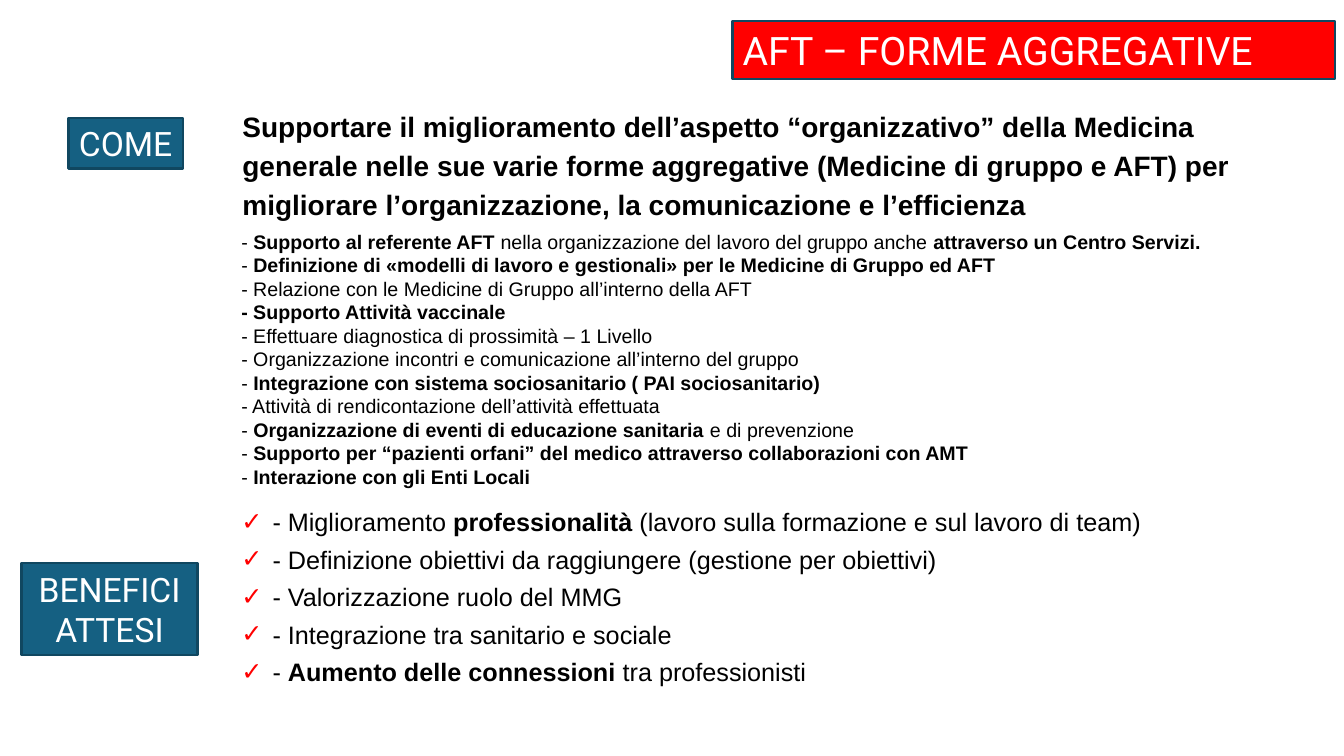
from lxml.etree import SubElement as Sub
from pptx import Presentation
from pptx.dml.color import RGBColor as Rgb
from pptx.enum.shapes import MSO_SHAPE as Kind
from pptx.enum.text import MSO_ANCHOR as Anchor, MSO_AUTO_SIZE as Fit, PP_ALIGN as Align
from pptx.oxml.ns import qn
from pptx.util import Inches, Pt

WHITE = Rgb(255, 255, 255)
BLACK = Rgb(0, 0, 0)
RED = Rgb(255, 0, 0)
TEAL = Rgb(0x15, 0x60, 0x82)
EDGE = Rgb(0x10, 0x47, 0x60)

GOAL = (
    "**Supportare il miglioramento dell’aspetto “organizzativo” della Medicina "
    "generale nelle sue varie forme aggregative (Medicine di gruppo e AFT) per "
    "migliorare l’organizzazione, la comunicazione e l’efficienza**"
)
MEANS = [
    "- **Supporto al referente AFT **nella organizzazione del lavoro del gruppo anche "
    "**attraverso un Centro Servizi.**",
    "- **Definizione di «modelli di lavoro e gestionali» per le Medicine di Gruppo ed AFT**",
    "- Relazione con le Medicine di Gruppo all’interno della AFT",
    "**- Supporto Attività vaccinale**",
    "- Effettuare diagnostica di prossimità – 1 Livello",
    "- Organizzazione incontri e comunicazione all’interno del gruppo",
    "- **Integrazione con sistema sociosanitario ( PAI sociosanitario)**",
    "- Attività di rendicontazione dell’attività effettuata",
    "- **Organizzazione di eventi di educazione sanitaria **e di prevenzione",
    "- **Supporto per “pazienti orfani” del medico attraverso collaborazioni con AMT**",
    "- **Interazione con gli Enti Locali**",
]
GAINS = [
    "- Miglioramento **professionalità **(lavoro sulla formazione e sul lavoro di team)",
    "- Definizione obiettivi da raggiungere (gestione per obiettivi)",
    "- Valorizzazione ruolo del MMG",
    "- Integrazione tra sanitario e sociale",
    "- **Aumento delle connessioni **tra professionisti",
]


def apply(item, style):
    for key, value in style.items():
        setattr(item, key, value)


class Board:
    plain = {"name": "Arial", "color": BLACK}
    badge = {"name": "Roboto", "color": WHITE}

    def __init__(self, deck):
        self.wide, self.high = deck.slide_width, deck.slide_height
        self.slide = deck.slides.add_slide(deck.slide_layouts[3])

    def area(self, left, top, width, height):
        return [
            round(share * size / 100)
            for share, size in zip((left, top, width, height), (self.wide, self.high) * 2)
        ]

    def place(self, shape, area):
        apply(shape, dict(zip(("left", "top", "width", "height"), self.area(*area))))

    def fill_text(self, shape, lines, font, size, para, anchor=Anchor.TOP, wrap=True, tick=False):
        frame = shape.text_frame
        apply(frame, {"word_wrap": wrap, "auto_size": Fit.NONE, "vertical_anchor": anchor})
        for row, line in enumerate(lines):
            par = frame.add_paragraph() if row else frame.paragraphs[0]
            self.bullet(par, tick)
            apply(par, {"space_before": Pt(0), **para})
            for turn, part in enumerate(line.split("**")):
                for step, text in enumerate(part.split("\v")):
                    if step:
                        par.add_line_break()
                    if text:
                        run = par.add_run()
                        run.text = text
                        apply(run.font, {"name": font["name"], "size": Pt(size), "bold": turn % 2 == 1})
                        run.font.color.rgb = font["color"]

    def bullet(self, par, tick):
        prop = par._p.get_or_add_pPr()
        dent = Inches(0.31) if tick else 0
        prop.set("marL", str(dent))
        prop.set("indent", str(-dent))
        if tick:
            Sub(Sub(prop, qn("a:buClr")), qn("a:srgbClr"), val=str(RED))
            Sub(prop, qn("a:buChar"), char="✓")
        else:
            Sub(prop, qn("a:buNone"))

    def paint(self, shape, fill):
        shape.fill.solid()
        shape.fill.fore_color.rgb = fill
        shape.line.color.rgb = EDGE
        shape.line.width = Pt(1.5)

    def title(self, text, area):
        shape = self.slide.shapes.title
        self.place(shape, area)
        self.paint(shape, RED)
        self.fill_text(shape, [text], self.badge, 28, {"alignment": Align.LEFT}, Anchor.MIDDLE)

    def label(self, text, area, wrap=True):
        shape = self.slide.shapes.add_shape(Kind.RECTANGLE, *self.area(*area))
        shape.shadow.inherit = False
        self.paint(shape, TEAL)
        self.fill_text(shape, [text], self.badge, 24, {"alignment": Align.CENTER}, Anchor.MIDDLE, wrap)

    def lead(self, text, area):
        shape = self.slide.shapes.add_textbox(*self.area(*area))
        self.fill_text(shape, [text], self.plain, 20, {"line_spacing": 1.15, "space_after": Pt(8)})

    def points(self, slot, lines, area, size, para, tick=False):
        shape = self.slide.placeholders[slot]
        self.place(shape, area)
        self.fill_text(shape, lines, self.plain, size, {"alignment": Align.JUSTIFY, **para}, tick=tick)


def main():
    deck = Presentation()
    deck.slide_width, deck.slide_height = Inches(13.33), Inches(7.5)
    board = Board(deck)
    board.title("AFT – FORME AGGREGATIVE", (54.5, 2.8, 44.8, 7.6))
    board.label("COME", (5.1, 15.6, 8.5, 6.7), wrap=False)
    board.lead(GOAL, (17.3, 13.2, 77.6, 16.5))
    board.points(1, MEANS, (17.2, 29.7, 77.8, 37.1), 14, {"line_spacing": 1.0})
    board.label("BENEFICI\vATTESI", (1.6, 74.5, 13.1, 12.1))
    spread = {"line_spacing": 1.15, "space_after": Pt(2)}
    board.points(2, GAINS, (17.2, 65.7, 77, 25.9), 18, spread, tick=True)
    deck.save("out.pptx")


if __name__ == "__main__":
    main()
